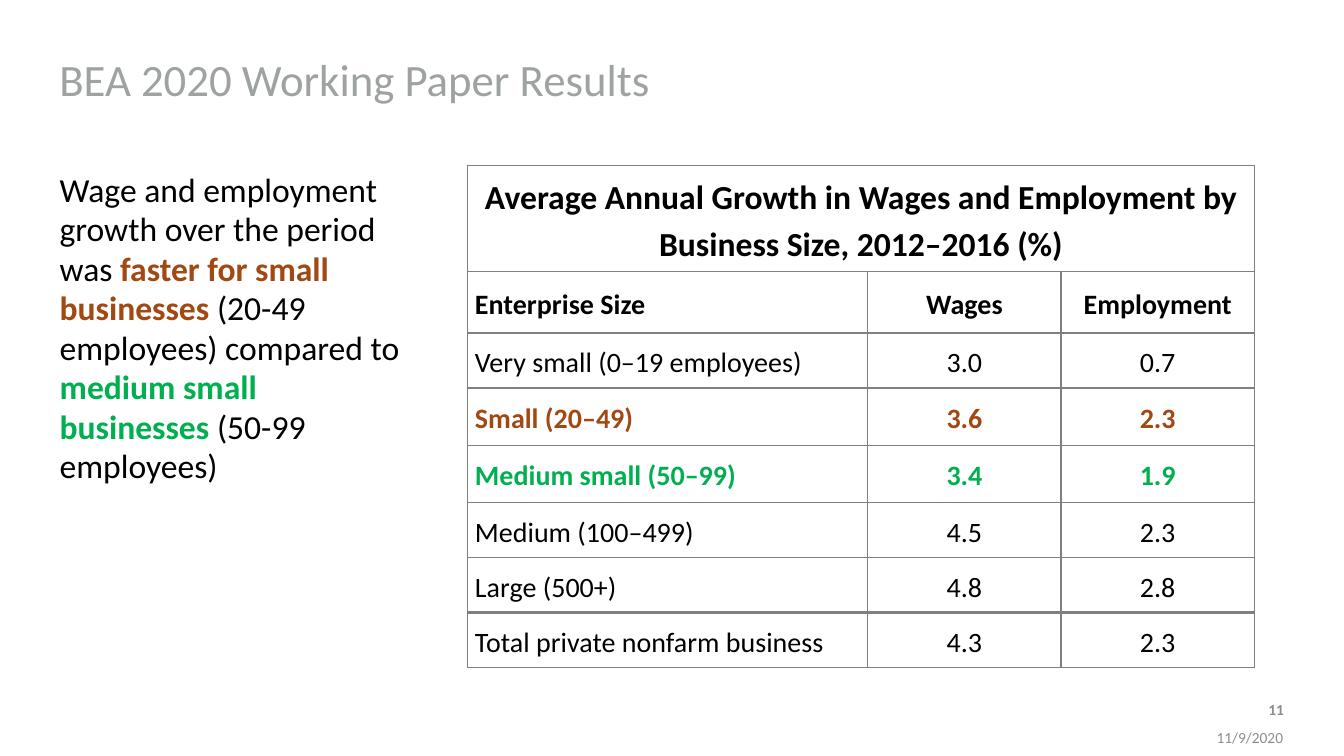
"""Build the slide on wage and employment growth by business size."""
from lxml import etree
from pptx import Presentation
from pptx.dml.color import RGBColor
from pptx.enum.text import MSO_ANCHOR as ANCHOR, MSO_AUTO_SIZE as FIT, PP_ALIGN as ALIGN
from pptx.oxml import parse_xml
from pptx.oxml.ns import nsdecls, qn
from pptx.util import Cm, Pt

BLACK = RGBColor(0x00, 0x00, 0x00)
WHITE = RGBColor(0xFF, 0xFF, 0xFF)
TITLE_GREY = RGBColor(0x9E, 0xA2, 0xA2)
FOOTER_GREY = RGBColor(0x8C, 0x8C, 0x8C)
BORDER_GREY = RGBColor(0x80, 0x80, 0x80)
RUST = RGBColor(0xA2, 0x48, 0x12)
GREEN = RGBColor(0x00, 0xB0, 0x50)


def write(p, text, size=24, color=BLACK, bold=False, align=ALIGN.LEFT):
    p.alignment = align
    r = p.add_run()
    r.text = text
    r.font.name = "Calibri"
    r.font.size = Pt(size)
    r.font.bold = bold
    r.font.color.rgb = color


def set_border(cell, side, width):
    cell._tc.get_or_add_tcPr().append(parse_xml(
        f'<a:ln{side} {nsdecls("a")} w="{Pt(width)}"><a:solidFill>'
        f'<a:srgbClr val="{BORDER_GREY}"/></a:solidFill></a:ln{side}>'))


prs = Presentation()
prs.slide_width, prs.slide_height = Cm(33.87), Cm(19.05)
s = prs.slides.add_slide(prs.slide_layouts[1])

title = s.shapes.title
title.left, title.top, title.width, title.height = Cm(1.24), Cm(0.64), Cm(25.86), Cm(2.54)
tf = title.text_frame
tf.auto_size = FIT.NONE
tf.vertical_anchor = ANCHOR.MIDDLE
tf.margin_bottom = 0
write(tf.paragraphs[0], "BEA 2020 Working Paper Results", size=32, color=TITLE_GREY)

body = s.placeholders[1]
body.left, body.top, body.width, body.height = Cm(1.22), Cm(4.17), Cm(9.35), Cm(12.07)
tf = body.text_frame
tf.auto_size = FIT.NONE
p = tf.paragraphs[0]
pPr = p._p.get_or_add_pPr()
pPr.set("marL", str(Cm(0.03)))
pPr.set("indent", "0")
etree.SubElement(pPr, qn("a:buNone"))
p.line_spacing = 0.98
p.space_before = Pt(0)
p.space_after = Pt(4.5)
for text, color, bold in [
    ("Wage and employment growth over the period was", BLACK, False),
    (" faster for small businesses ", RUST, True),
    ("(20-49 employees) compared to ", BLACK, False),
    ("medium small businesses ", GREEN, True),
    ("(50-99 employees)", BLACK, False),
]:
    write(p, text, color=color, bold=bold)

rows = [
    (["Average Annual Growth in Wages and Employment by Business Size, 2012–2016 (%)", "", ""],
     2.67, BLACK, True),
    (["Enterprise Size", "Wages", "Employment"], 1.55, BLACK, True),
    (["Very small (0–19 employees)", "3.0", "0.7"], 1.39, BLACK, False),
    (["Small (20–49)", "3.6", "2.3"], 1.44, RUST, True),
    (["Medium small (50–99)", "3.4", "1.9"], 1.44, GREEN, True),
    (["Medium (100–499)", "4.5", "2.3"], 1.39, BLACK, False),
    (["Large (500+)", "4.8", "2.8"], 1.39, BLACK, False),
    (["Total private nonfarm business", "4.3", "2.3"], 1.39, BLACK, False),
]
total = len(rows) - 1
table = s.shapes.add_table(len(rows), 3, Cm(11.79), Cm(4.17), Cm(19.82), Cm(12.66)).table
table.first_row = table.horz_banding = False
for column, width in zip(table.columns, [10.08, 4.87, 4.87]):
    column.width = Cm(width)
table.cell(0, 0).merge(table.cell(0, 2))

for i, (texts, height, color, bold) in enumerate(rows):
    table.rows[i].height = Cm(height)
    for j, text in enumerate(texts):
        cell = table.cell(i, j)
        cell.margin_left = cell.margin_right = Cm(0.18)
        cell.margin_top = cell.margin_bottom = 0
        cell.vertical_anchor = ANCHOR.MIDDLE
        for side in "LRTB":
            heavy = (i, side) in [(total - 1, "B"), (total, "T")]
            set_border(cell, side, 3 if heavy else 1)
        cell.fill.solid()
        cell.fill.fore_color.rgb = WHITE
        if text:
            p = cell.text_frame.paragraphs[0]
            p.line_spacing = 1.15
            write(p, text, size=24 if i == 0 else 20, color=color, bold=bold,
                  align=ALIGN.CENTER if i == 0 or j > 0 else ALIGN.LEFT)

for text, left, top, width, height, bold in [
    ("11/9/2020", 28.93, 18.36, 3.66, 0.46, False),
    ("11", 30.63, 17.6, 1.98, 0.56, True),
]:
    tf = s.shapes.add_textbox(Cm(left), Cm(top), Cm(width), Cm(height)).text_frame
    tf.word_wrap = True
    tf.vertical_anchor = ANCHOR.MIDDLE
    write(tf.paragraphs[0], text, size=11, color=FOOTER_GREY, bold=bold, align=ALIGN.RIGHT)

prs.save("out.pptx")
